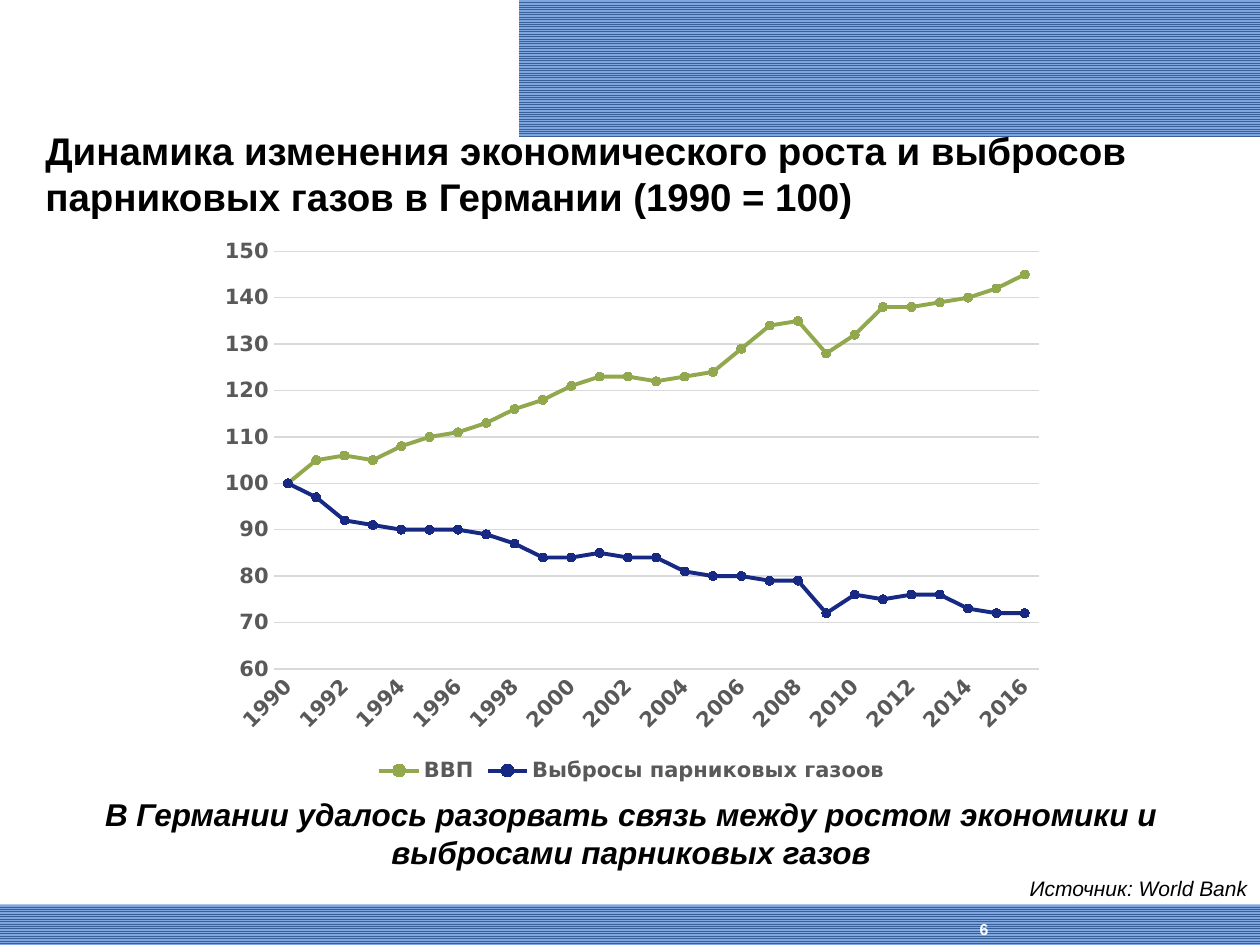
"""Build a slide that charts German growth against greenhouse gas output."""
from dataclasses import dataclass

from lxml import etree
from pptx import Presentation
from pptx.chart.data import CategoryChartData
from pptx.dml.color import RGBColor
from pptx.enum.chart import XL_CHART_TYPE, XL_LEGEND_POSITION, XL_MARKER_STYLE, XL_TICK_MARK
from pptx.enum.dml import MSO_PATTERN
from pptx.enum.shapes import MSO_SHAPE
from pptx.enum.text import MSO_ANCHOR, MSO_AUTO_SIZE, PP_ALIGN
from pptx.util import Inches, Pt

LINES = XL_CHART_TYPE.LINE_MARKERS
BOTTOM = XL_LEGEND_POSITION.BOTTOM
CIRCLE = XL_MARKER_STYLE.CIRCLE
NO_TICK = XL_TICK_MARK.NONE
STRIPES = MSO_PATTERN.NARROW_HORIZONTAL
RECT = MSO_SHAPE.RECTANGLE
TOP, MIDDLE, BASE = MSO_ANCHOR.TOP, MSO_ANCHOR.MIDDLE, MSO_ANCHOR.BOTTOM
LEFT, CENTER, RIGHT = PP_ALIGN.LEFT, PP_ALIGN.CENTER, PP_ALIGN.RIGHT
NO_FIT = MSO_AUTO_SIZE.NONE


@dataclass(frozen=True)
class Theme:
    font: str = "Arial"
    chart_font: str = "DejaVu Sans"
    ink: str = "000000"
    white: str = "FFFFFF"
    dark: str = "386098"
    light: str = "80A6DF"
    grey: str = "595959"
    grid: str = "D9D9D9"
    green: str = "92A84E"
    navy: str = "172983"
    title: int = 22
    claim: int = 18
    label: int = 12
    number: int = 9


THEME = Theme()
WIDE, HIGH = Inches(10), Inches(7.5)

TITLE = "Динамика изменения экономического роста и выбросов парниковых газов в Германии (1990 = 100)"
CLAIM = "В Германии удалось разорвать связь между ростом экономики и выбросами парниковых газов"
SOURCE = "Источник: World Bank"
NUMBER = "6"
YEARS = [str(year) for year in range(1990, 2017)]
SERIES = [
    ("ВВП", THEME.green,
     [100, 105, 106, 105, 108, 110, 111, 113, 116, 118, 121, 123, 123, 122,
      123, 124, 129, 134, 135, 128, 132, 138, 138, 139, 140, 142, 145]),
    ("Выбросы парниковых газоов", THEME.navy,
     [100, 97, 92, 91, 90, 90, 90, 89, 87, 84, 84, 85, 84, 84,
      81, 80, 80, 79, 79, 72, 76, 75, 76, 76, 73, 72, 72]),
]

AREAS = {
    "head": (0.412, 0, 0.588, 0.144),
    "foot": (0, 0.957, 1, 0.043),
    "title": (0.026, 0.145, 0.927, 0.076),
    "chart": (0.165, 0.241, 0.673, 0.593),
    "claim": (0.052, 0.855, 0.898, 0.053),
    "source": (0.6, 0.92, 0.4, 0.031),
    "number": (0.733, 0.933, 0.096, 0.067),
}


def area(name):
    left, top, width, height = AREAS[name]
    return int(left * WIDE), int(top * HIGH), int(width * WIDE), int(height * HIGH)


def style(font, size, color, face=THEME.font, bold=False, italic=False):
    font.name, font.size, font.bold, font.italic = face, Pt(size), bold, italic
    font.color.rgb = RGBColor.from_string(color)


def write(shape, name, text, size, color=THEME.ink, align=LEFT, anchor=MIDDLE, **kind):
    shape.left, shape.top, shape.width, shape.height = area(name)
    frame = shape.text_frame
    frame.text = text
    frame.word_wrap, frame.auto_size, frame.vertical_anchor = True, NO_FIT, anchor
    para = frame.paragraphs[0]
    para.alignment, para.space_before = align, Pt(0)
    style(para.runs[0].font, size, color, **kind)


def add_band(slide, name):
    band = slide.shapes.add_shape(RECT, *area(name))
    band.shadow.inherit = False
    band.line.fill.background()
    band.fill.patterned()
    band.fill.pattern = STRIPES
    band.fill.fore_color.rgb = RGBColor.from_string(THEME.dark)
    band.fill.back_color.rgb = RGBColor.from_string(THEME.light)
    slide.shapes._spTree.insert(2, band._element)


def draw(line, color, width):
    line.color.rgb = RGBColor.from_string(color)
    line.width = Pt(width)


def add_chart(slide):
    data = CategoryChartData()
    data.categories = YEARS
    for name, _, values in SERIES:
        data.add_series(name, values)
    chart = slide.shapes.add_chart(LINES, *area("chart"), data).chart
    chart.has_title = False
    chart.has_legend = True
    chart.legend.position, chart.legend.include_in_layout = BOTTOM, False
    years, index = chart.category_axis, chart.value_axis
    for part in (chart, chart.legend, years.tick_labels, index.tick_labels):
        style(part.font, THEME.label, THEME.grey, THEME.chart_font, bold=True)
    for axis in (years, index):
        axis.major_tick_mark = axis.minor_tick_mark = NO_TICK
    etree.SubElement(years._element.txPr, "unused")
    years._element.txPr.remove(years._element.txPr[-1])
    years._element.txPr.bodyPr.set("rot", "-2700000")
    draw(years.format.line, THEME.grid, 0.75)
    index.minimum_scale, index.maximum_scale, index.major_unit = 60, 150, 10
    index.format.line.fill.background()
    index.has_major_gridlines = True
    draw(index.major_gridlines.format.line, THEME.grid, 0.75)
    plot = chart.plots[0]
    plot.vary_by_categories = False
    for line, (_, color, _) in zip(plot.series, SERIES):
        line.smooth = False
        draw(line.format.line, color, 2.25)
        mark = line.marker
        mark.style, mark.size = CIRCLE, 5
        mark.format.fill.solid()
        mark.format.fill.fore_color.rgb = RGBColor.from_string(color)
        draw(mark.format.line, color, 0.75)


def main():
    deck = Presentation()
    deck.slide_width, deck.slide_height = WIDE, HIGH
    slide = deck.slides.add_slide(deck.slide_layouts[4])
    title, claim, spare, source, extra = slide.placeholders
    for item in (spare, extra):
        item._element.getparent().remove(item._element)
    for name in ("foot", "head"):
        add_band(slide, name)
    write(title, "title", TITLE, THEME.title, bold=True)
    write(claim, "claim", CLAIM, THEME.claim, align=CENTER, bold=True, italic=True)
    write(source, "source", SOURCE, THEME.label, align=RIGHT, anchor=TOP, italic=True)
    number = slide.shapes.add_textbox(*area("number"))
    write(number, "number", NUMBER, THEME.number, THEME.white, CENTER, BASE, bold=True)
    add_chart(slide)
    deck.save("out.pptx")


if __name__ == "__main__":
    main()
